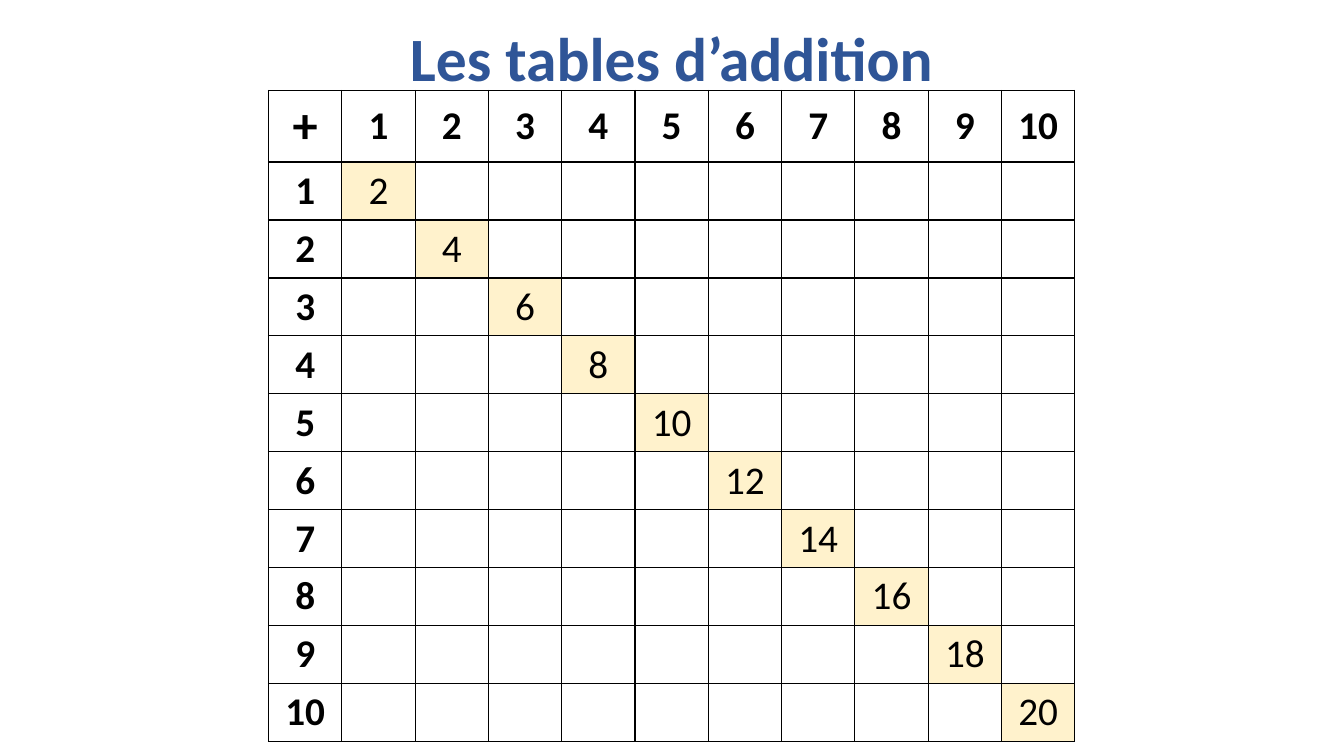
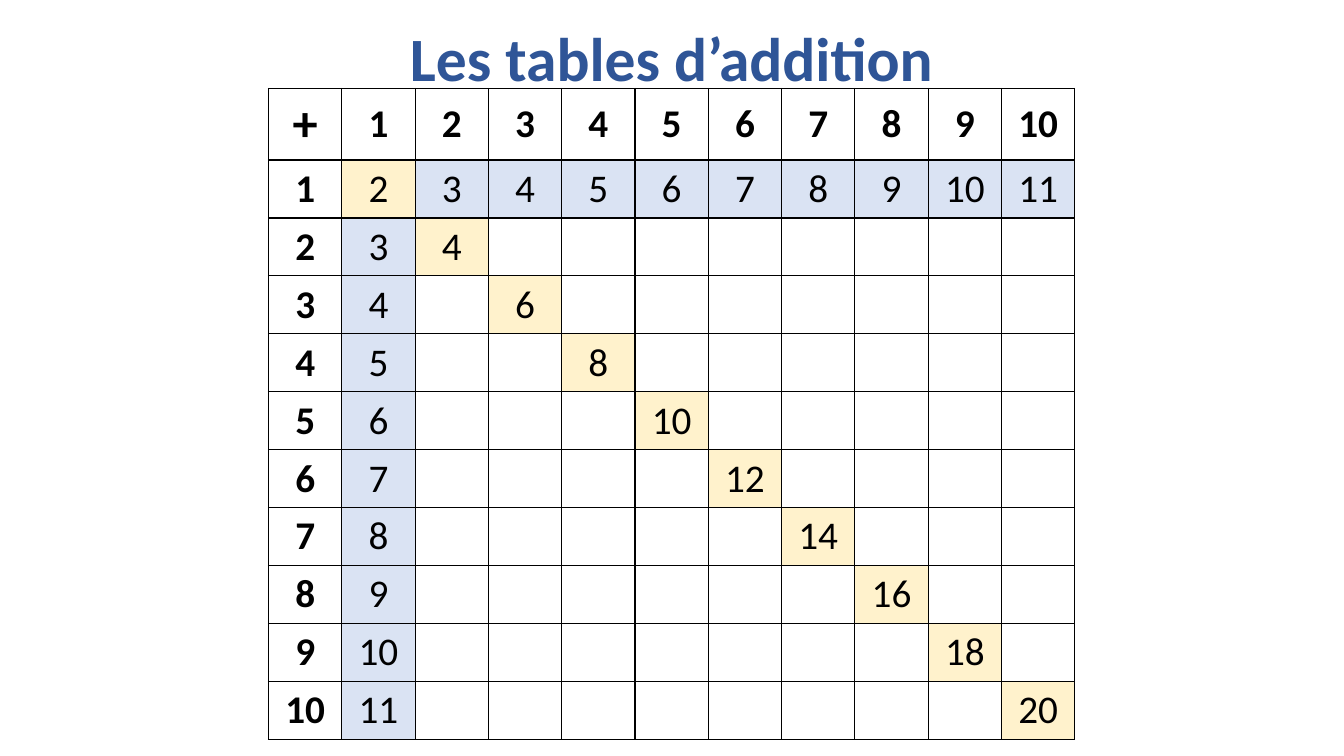
import pptx
import pptx.util
import pptx.dml.color
import pptx.enum.text
import pptx.oxml
import pptx.oxml.ns

Pt = pptx.util.Pt
RGBColor = pptx.dml.color.RGBColor
CENTER = pptx.enum.text.PP_ALIGN.CENTER
MIDDLE = pptx.enum.text.MSO_ANCHOR.MIDDLE

BLUE = RGBColor(0x2F, 0x55, 0x97)
BLACK = RGBColor(0, 0, 0)
WHITE = RGBColor(255, 255, 255)
CREAM = RGBColor(0xFF, 0xF2, 0xCC)
PALE_BLUE = RGBColor(0xDA, 0xE3, 0xF3)
FONT = "Calibri"

TITLE = "Les tables d’addition"
# One entry per slide: table top in points, and the addend whose sums are shown
SLIDES = [
    {"top": 64.7, "shown_addends": ()},
    {"top": 63.2, "shown_addends": (1,)},
]
LAST = 10
TABLE_LEFT, TABLE_WIDTH = 191.8, 576
HEADER_HEIGHT, ROW_HEIGHT = 51.1, 41.4


def write(tf, text, size=28, bold=False, color=BLACK, spacing=1.0):
    p = tf.paragraphs[0]
    p.alignment = CENTER
    p.line_spacing = spacing
    r = p.add_run()
    r.text = text
    r.font.name = FONT
    r.font.size = Pt(size)
    r.font.bold = bold
    r.font.color.rgb = color


def add_title(s):
    box = s.shapes.add_textbox(Pt(66), Pt(-7.92), Pt(828), Pt(104.4))
    tf = box.text_frame
    tf.word_wrap = True
    tf.vertical_anchor = MIDDLE
    write(tf, TITLE, size=44, bold=True, color=BLUE, spacing=0.9)


def set_borders(cell):
    tc_pr = cell._tc.get_or_add_tcPr()
    for side in ("lnL", "lnR", "lnT", "lnB"):
        tc_pr.append(pptx.oxml.parse_xml(
            f'<a:{side} {pptx.oxml.ns.nsdecls("a")} w="{Pt(1)}"><a:solidFill>'
            f'<a:srgbClr val="{BLACK}"/></a:solidFill></a:{side}>'))


def cell_content(row, col, shown_addends):
    """Return text, fill and text format; row 0 and column 0 are headings."""
    if row == col == 0:
        return "+", WHITE, {"size": 36, "bold": True}
    if row == 0 or col == 0:
        return str(row + col), WHITE, {"bold": True}
    if row == col:
        return str(row + col), CREAM, {}
    if row in shown_addends or col in shown_addends:
        return str(row + col), PALE_BLUE, {}
    return "", None, {}


def add_addition_table(s, top, shown_addends):
    count = LAST + 1
    height = HEADER_HEIGHT + LAST * ROW_HEIGHT
    table = s.shapes.add_table(count, count, Pt(TABLE_LEFT), Pt(top),
                               Pt(TABLE_WIDTH), Pt(height)).table
    table.first_row = table.horz_banding = False
    for i in range(count):
        table.columns[i].width = Pt(TABLE_WIDTH / count)
        table.rows[i].height = Pt(ROW_HEIGHT if i else HEADER_HEIGHT)
    for row in range(count):
        for col in range(count):
            cell = table.cell(row, col)
            text, fill, text_format = cell_content(row, col, shown_addends)
            set_borders(cell)
            cell.vertical_anchor = MIDDLE
            if fill is None:
                cell.fill.background()
            else:
                cell.fill.solid()
                cell.fill.fore_color.rgb = fill
            if text:
                write(cell.text_frame, text, **text_format)


def main():
    prs = pptx.Presentation()
    prs.slide_width, prs.slide_height = Pt(960), Pt(540)
    for content in SLIDES:
        s = prs.slides.add_slide(prs.slide_layouts[6])
        add_title(s)
        add_addition_table(s, **content)
    prs.save("out.pptx")


if __name__ == "__main__":
    main()
